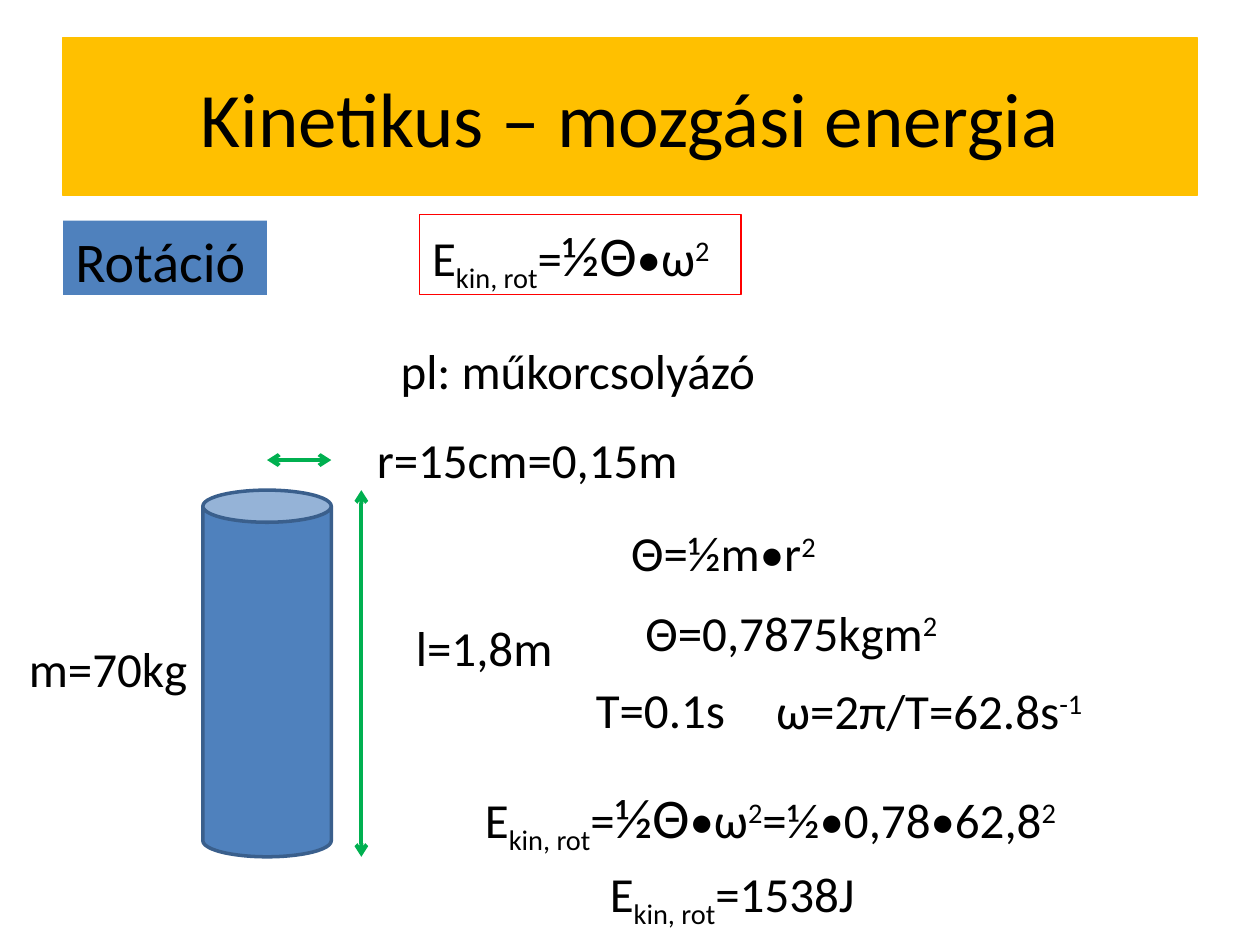
from dataclasses import dataclass

from lxml.etree import SubElement
from pptx import Presentation
from pptx.dml.color import RGBColor
from pptx.enum.shapes import MSO_CONNECTOR, MSO_SHAPE
from pptx.enum.text import MSO_ANCHOR, MSO_AUTO_SIZE, PP_ALIGN
from pptx.oxml.ns import qn
from pptx.util import Pt


@dataclass(frozen=True)
class Theme:
    font: str = "Calibri"
    text: RGBColor = RGBColor(0, 0, 0)
    banner: RGBColor = RGBColor(0xFF, 0xC0, 0x00)
    blue: RGBColor = RGBColor(0x4F, 0x81, 0xBD)
    cylinder_line: RGBColor = RGBColor(0x3A, 0x5F, 0x8C)
    frame: RGBColor = RGBColor(0xFF, 0x00, 0x00)
    arrow: RGBColor = RGBColor(0x00, 0xB0, 0x50)
    title_size: int = 44
    large_size: int = 32
    body_size: int = 28


THEME = Theme()
SUPERSCRIPT, SUBSCRIPT = 30, -25

# Formula pieces: (text, baseline shift in percent, size)
SQUARED = ("2", SUPERSCRIPT)
ENERGY = [("E",), ("kin, rot", SUBSCRIPT)]
ROTATION_FORMULA = ENERGY + [("=",), ("½Θ", 0, THEME.large_size), ("•ω",), SQUARED]


def add_run(paragraph, text, baseline=0, size=THEME.body_size):
    run = paragraph.add_run()
    run.text = text
    run.font.name = THEME.font
    run.font.size = Pt(size)
    run.font.color.rgb = THEME.text
    if baseline:
        run.font._rPr.set("baseline", str(baseline * 1000))


def add_block(slide, kind, box, fill, line=None, line_width=0.75):
    shape = slide.shapes.add_shape(kind, *map(Pt, box))
    shape.shadow.inherit = False
    shape.fill.solid()
    shape.fill.fore_color.rgb = fill
    if line is None:
        shape.line.fill.background()
    else:
        shape.line.color.rgb = line
        shape.line.width = Pt(line_width)
    return shape


def add_label(slide, box, pieces):
    """Text box on one line, made of formula pieces."""
    label = slide.shapes.add_textbox(*map(Pt, box))
    frame = label.text_frame
    frame.word_wrap = False
    frame.auto_size = MSO_AUTO_SIZE.SHAPE_TO_FIT_TEXT
    for piece in pieces:
        add_run(frame.paragraphs[0], *piece)
    return label


def add_double_arrow(slide, start, end):
    arrow = slide.shapes.add_connector(MSO_CONNECTOR.STRAIGHT, *map(Pt, start + end))
    arrow.line.color.rgb = THEME.arrow
    arrow.line.width = Pt(2.25)
    line = arrow.line._get_or_add_ln()
    for tag in ("a:headEnd", "a:tailEnd"):
        SubElement(line, qn(tag)).set("type", "arrow")
    SubElement(arrow._element.spPr, qn("a:effectLst"))


def add_title(slide, box):
    banner = add_block(slide, MSO_SHAPE.RECTANGLE, box, THEME.banner, THEME.banner)
    frame = banner.text_frame
    frame.vertical_anchor = MSO_ANCHOR.MIDDLE
    paragraph = frame.paragraphs[0]
    paragraph.alignment = PP_ALIGN.CENTER
    add_run(paragraph, "Kinetikus – mozgási energia", size=THEME.title_size)


def add_heading_row(slide, box):
    """Topic tag on the left, framed formula to its right."""
    left, top, width, height = box
    tag = add_block(slide, MSO_SHAPE.RECTANGLE, (left, top + 3.6, 116.6, 42.5), THEME.blue)
    frame = tag.text_frame
    frame.vertical_anchor = MSO_ANCHOR.TOP
    paragraph = frame.paragraphs[0]
    paragraph.alignment = PP_ALIGN.LEFT
    paragraph.space_before = Pt(0.2 * THEME.large_size)
    add_run(paragraph, "Rotáció", size=THEME.large_size)

    formula_width = 183.6
    formula_box = (left + width - formula_width, top, formula_width, height)
    formula = add_label(slide, formula_box, ROTATION_FORMULA)
    formula.line.color.rgb = THEME.frame
    formula.line.width = Pt(0.75)


def add_cylinder(slide, box):
    """Cylinder with arrows for its radius and its length."""
    left, top, width, height = box
    right, bottom = left + width, top + height
    add_block(slide, MSO_SHAPE.CAN, box, THEME.blue, THEME.cylinder_line, 2)
    radius_y, length_x = top - 17.2, right + 17.2
    add_double_arrow(slide, (left + width / 2, radius_y), (right, radius_y))
    add_double_arrow(slide, (length_x, bottom), (length_x, top))


def add_calculation(slide, box):
    """Given values and the steps to the result."""
    left, top = box[:2]
    small, tall = 41.2, 46.1
    labels = [
        (212.4, 0, 219.6, small, [("pl: műkorcsolyázó",)]),
        (198.8, 51.2, 188.6, small, [("r=15cm=0,15m",)]),
        (221.2, 158.4, 93.6, small, [("l=1,8m",)]),
        (344.2, 104.4, 122.4, small, [("Θ=½m•r",), SQUARED]),
        (352.4, 149.8, 189.4, small, [("Θ=0,7875kgm",), SQUARED]),
        (0, 170.6, 105.8, small, [("m=70kg",)]),
        (324, 193.8, 89.3, small, [("T=0.1s",)]),
        (427, 194.4, 194.4, small, [("ω=2π/T=62.8s",), ("-1", SUPERSCRIPT)]),
        (260.6, 252.8, 359.3, tall, ROTATION_FORMULA + [("=½•0,78•62,8",), SQUARED]),
        (332, 298.8, 163.4, small, ENERGY + [("=1538J",)]),
    ]
    for x, y, width, height, pieces in labels:
        add_label(slide, (left + x, top + y, width, height), pieces)


def main():
    presentation = Presentation()
    presentation.slide_width, presentation.slide_height = Pt(720), Pt(540)
    slide = presentation.slides.add_slide(presentation.slide_layouts[6])
    add_title(slide, (36, 21.6, 648, 90))
    add_heading_row(slide, (36, 122.4, 387.4, 46.1))
    add_cylinder(slide, (115.9, 280.1, 73.4, 209.5))
    add_calculation(slide, (9.4, 190.8, 621.4, 340))
    presentation.save("out.pptx")


if __name__ == "__main__":
    main()
